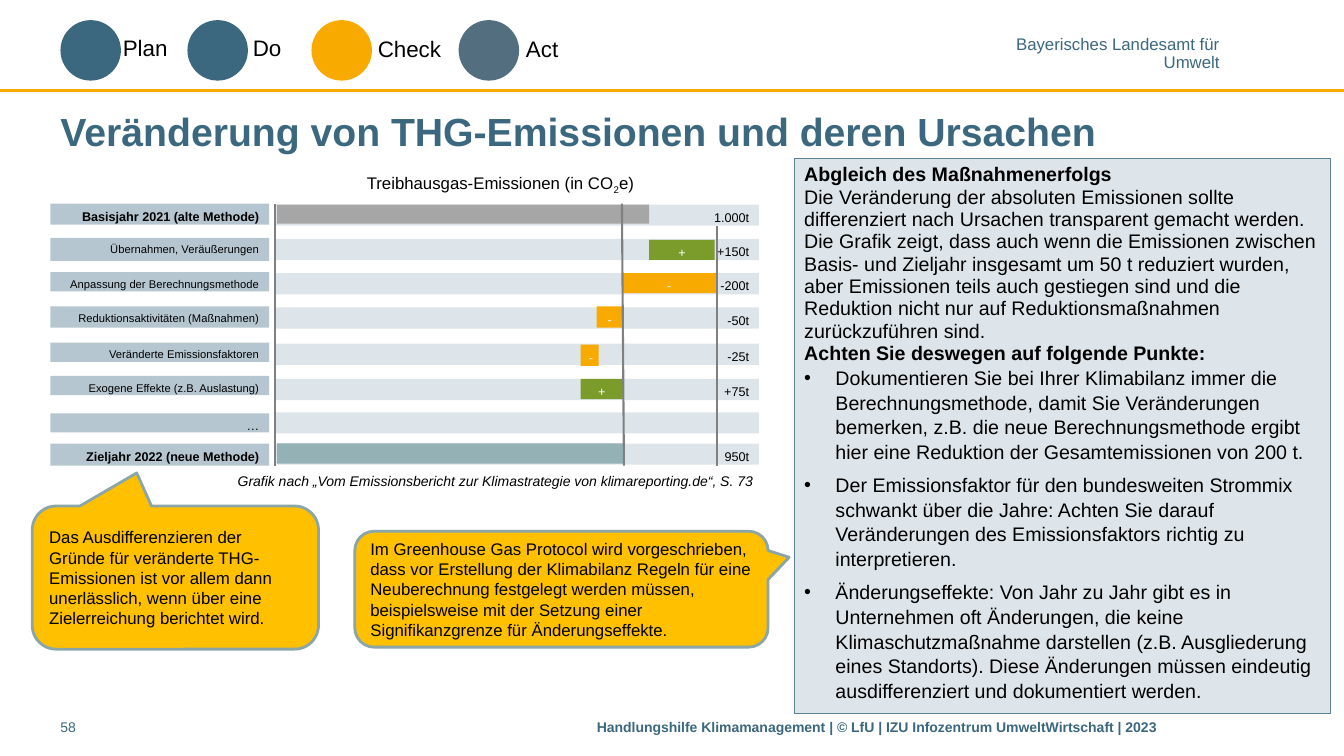
from lxml import etree
from pptx import Presentation
from pptx.dml.color import RGBColor
from pptx.enum.shapes import MSO_CONNECTOR, MSO_SHAPE
from pptx.enum.text import MSO_ANCHOR, PP_ALIGN
from pptx.oxml.ns import qn
from pptx.util import Inches, Pt

RECTANGLE = MSO_SHAPE.RECTANGLE
OVAL = MSO_SHAPE.OVAL
CALLOUT = MSO_SHAPE.ROUNDED_RECTANGULAR_CALLOUT
STRAIGHT = MSO_CONNECTOR.STRAIGHT
TOP, MIDDLE = MSO_ANCHOR.TOP, MSO_ANCHOR.MIDDLE
LEFT, CENTER, RIGHT = PP_ALIGN.LEFT, PP_ALIGN.CENTER, PP_ALIGN.RIGHT

FONT = "Arial"
BLACK = RGBColor(0x00, 0x00, 0x00)
WHITE = RGBColor(0xFF, 0xFF, 0xFF)
BLUE = RGBColor(0x3B, 0x68, 0x7F)
SLATE = RGBColor(0x52, 0x6E, 0x7F)
ORANGE = RGBColor(0xF9, 0xAA, 0x00)
AMBER = RGBColor(0xFF, 0xC0, 0x00)
GREEN = RGBColor(0x7B, 0x9C, 0x2A)
TEAL = RGBColor(0x94, 0xB2, 0xB5)
CALLOUT_EDGE = RGBColor(0x8A, 0xA6, 0xA8)
PANEL_EDGE = RGBColor(0x5C, 0x83, 0x95)
LABEL_FILL = RGBColor(0xB6, 0xC6, 0xD0)
PALE = RGBColor(0xDE, 0xE5, 0xEA)
GRAY = RGBColor(0xA6, 0xA6, 0xA6)
AXIS = RGBColor(0x80, 0x80, 0x80)

CELL = Inches(0.1)
COLUMNS, ROWS = 133.33, 75
LABEL_COLUMN, LABEL_WIDTH = 5, 21.7
TRACK_COLUMN, TRACK_WIDTH, TRACK_HEIGHT = 27.3, 48, 2.1

PHASES = [
    ("Plan", BLUE, 6, 11.2, 2.9),
    ("Do", BLUE, 18.6, 24.1, 2.9),
    ("Check", ORANGE, 30.9, 36.5, 3),
    ("Act", SLATE, 45.5, 51.2, 3),
]
CHART_ROWS = [
    ("Basisjahr 2021 (alte Methode)", 9, True, 20.2, 2.1, 20.3, "1.000t"),
    ("Übernahmen, Veräußerungen", 8, False, 23.6, 2.3, 23.7, "+150t"),
    ("Anpassung der Berechnungsmethode", 8, False, 27, 1.9, 27.1, "-200t"),
    ("Reduktionsaktivitäten (Maßnahmen)", 8, False, 30.4, 2.1, 30.5, "-50t"),
    ("Veränderte Emissionsfaktoren", 8, False, 34, 1.9, 34.1, "-25t"),
    ("Exogene Effekte (z.B. Auslastung)", 8, False, 37.3, 1.9, 37.6, "+75t"),
    ("…", 9, False, 41, 1.9, 40.9, ""),
    ("Zieljahr 2022 (neue Methode)", 9, True, 44, 2.2, 44, "950t"),
]
BARS = [
    (27.5, 20.3, 36.9, 1.9, GRAY, ""),
    (27.5, 44, 34.4, 2, TEAL, ""),
    (64.4, 23.8, 6.5, 2, GREEN, "+"),
    (61.7, 27.1, 9.4, 2, ORANGE, "-"),
    (59.2, 30.4, 2.6, 2.1, ORANGE, "-"),
    (57.6, 34.2, 1.8, 2.1, ORANGE, "-"),
    (57.6, 37.6, 4.2, 2, GREEN, "+"),
]
GUIDES = [(27.3, 20.2, 27.3), (71.1, 22.4, 71.1), (61.7, 20.2, 61.9)]
GUIDE_END = 46.2
CALLOUTS = [
    ((3.2, 50.2, 28.4, 14.2), (-0.135, -0.731, 0.167),
     "Das Ausdifferenzieren der Gründe für veränderte THG-Emissionen ist vor allem dann "
     "unerlässlich, wenn über eine Zielerreichung berichtet wird."),
    ((35.2, 52.7, 41, 11.5), (0.551, -0.275, 0.167),
     "Im Greenhouse Gas Protocol wird vorgeschrieben, dass vor Erstellung der Klimabilanz "
     "Regeln für eine Neuberechnung festgelegt werden müssen, beispielsweise mit der Setzung "
     "einer Signifikanzgrenze für Änderungseffekte."),
]
PANEL_TEXT = [
    ("Abgleich des Maßnahmenerfolgs", True),
    ("Die Veränderung der absoluten Emissionen sollte differenziert nach Ursachen transparent "
     "gemacht werden. Die Grafik zeigt, dass auch wenn die Emissionen zwischen Basis- und "
     "Zieljahr insgesamt um 50 t reduziert wurden, aber Emissionen teils auch gestiegen sind "
     "und die Reduktion nicht nur auf Reduktionsmaßnahmen zurückzuführen sind.", False),
    ("Achten Sie deswegen auf folgende Punkte:", True),
]
PANEL_BULLETS = [
    "Dokumentieren Sie bei Ihrer Klimabilanz immer die Berechnungsmethode, damit Sie "
    "Veränderungen bemerken, z.B. die neue Berechnungsmethode ergibt hier eine Reduktion der "
    "Gesamtemissionen von 200 t.",
    "Der Emissionsfaktor für den bundesweiten Strommix schwankt über die Jahre: Achten Sie "
    "darauf Veränderungen des Emissionsfaktors richtig zu interpretieren.",
    "Änderungseffekte: Von Jahr zu Jahr gibt es in Unternehmen oft Änderungen, die keine "
    "Klimaschutzmaßnahme darstellen (z.B. Ausgliederung eines Standorts). Diese Änderungen "
    "müssen eindeutig ausdifferenziert und dokumentiert werden.",
]


def grid(*cells):
    return [round(CELL * cell) for cell in cells]


def add_run(paragraph, text, size, color=BLACK, bold=False, italic=False):
    run = paragraph.add_run()
    run.text = text
    font = run.font
    font.name, font.size, font.bold, font.italic = FONT, Pt(size), bold, italic
    font.color.rgb = color
    return run


def next_paragraph(shape, align=LEFT):
    frame = shape.text_frame
    first = frame.paragraphs[0]
    paragraph = frame.add_paragraph() if first.runs else first
    paragraph.alignment = align
    return paragraph


def add_text(slide, box, text="", size=12, color=BLACK, bold=False, italic=False,
             inset=None, wrap=True, anchor=TOP):
    shape = slide.shapes.add_textbox(*grid(*box))
    frame = shape.text_frame
    frame.word_wrap, frame.vertical_anchor = wrap, anchor
    if inset is not None:
        frame.margin_left = frame.margin_right = inset
    if text:
        add_run(next_paragraph(shape), text, size, color, bold, italic)
    return shape


def add_block(slide, kind, box, fill, edge=None, edge_width=1, anchor=TOP):
    shape = slide.shapes.add_shape(kind, *grid(*box))
    shape.shadow.inherit = False
    shape.fill.solid()
    shape.fill.fore_color.rgb = fill
    if edge is None:
        shape.line.fill.background()
    else:
        shape.line.color.rgb = edge
        shape.line.width = Pt(edge_width)
    shape.text_frame.word_wrap = True
    shape.text_frame.vertical_anchor = anchor
    return shape


def add_rule(slide, ends, color, width):
    rule = slide.shapes.add_connector(STRAIGHT, *grid(*ends))
    rule.line.color.rgb = color
    rule.line.width = Pt(width)
    etree.SubElement(rule._element.spPr, qn("a:effectLst"))


def add_bullet(paragraph):
    properties = paragraph._p.get_or_add_pPr()
    properties.set("marL", str(Inches(0.31)))
    properties.set("indent", str(-Inches(0.31)))
    paragraph.line_spacing = 1.05
    paragraph.space_after = Pt(6)
    etree.SubElement(properties, qn("a:buFont")).set("typeface", FONT)
    etree.SubElement(properties, qn("a:buChar")).set("char", "•")


def add_header(slide):
    add_rule(slide, (0, 9, COLUMNS, 9), ORANGE, 2)
    agency = add_text(slide, (100.7, 3.7, 20.3, 3.4), inset=0, wrap=False)
    agency.text_frame.margin_top = agency.text_frame.margin_bottom = 0
    for text in ("Bayerisches Landesamt für", "Umwelt"):
        paragraph = next_paragraph(agency, RIGHT)
        paragraph.line_spacing = 0.85
        add_run(paragraph, text, 12, BLUE)
    for name, color, circle_column, text_column, text_row in PHASES:
        add_block(slide, OVAL, (circle_column, 2, 6, 6), color)
        add_text(slide, (text_column, text_row, 13, 3.7), name, 16)
    add_text(slide, (6, 10.2, 123.1, 5.5), "Veränderung von THG-Emissionen und deren Ursachen",
             28, BLUE, bold=True, inset=0, anchor=MIDDLE)


def add_waterfall(slide):
    for label, size, bold, label_row, label_height, track_row, value in CHART_ROWS:
        name = add_block(slide, RECTANGLE,
                         (LABEL_COLUMN, label_row, LABEL_WIDTH, label_height), LABEL_FILL)
        add_run(next_paragraph(name, RIGHT), label, size, bold=bold)
        track = add_block(slide, RECTANGLE,
                          (TRACK_COLUMN, track_row, TRACK_WIDTH, TRACK_HEIGHT), PALE)
        if value:
            add_run(next_paragraph(track, RIGHT), value, 9)
    for left, top, width, height, color, sign in BARS:
        bar = add_block(slide, RECTANGLE, (left, top, width, height), color)
        if sign:
            add_run(next_paragraph(bar, CENTER), sign, 9, WHITE)
    for start, top, end in GUIDES:
        add_rule(slide, (start, top, end, GUIDE_END), AXIS, 1.5)
    heading = next_paragraph(add_text(slide, (35.4, 16.6, 28.8, 3), wrap=False))
    add_run(heading, "Treibhausgas-Emissionen (in CO", 12)
    subscript = add_run(heading, "2", 12)
    subscript._r.get_or_add_rPr().set("baseline", "-25000")
    add_run(heading, "e)", 12)
    add_text(slide, (22.6, 46.4, 57, 2.7),
             "Grafik nach „Vom Emissionsbericht zur Klimastrategie von klimareporting.de“, S. 73",
             10, italic=True)


def add_callout(slide, box, adjustments, text):
    callout = add_block(slide, CALLOUT, box, AMBER, CALLOUT_EDGE, 2, MIDDLE)
    for index, value in enumerate(adjustments):
        callout.adjustments[index] = value
    add_run(next_paragraph(callout), text, 12)


def add_panel(slide):
    panel = add_block(slide, RECTANGLE, (78.8, 15.7, 53.2, 55.1), PALE, PANEL_EDGE)
    for text, bold in PANEL_TEXT:
        paragraph = next_paragraph(panel)
        paragraph.line_spacing = Pt(16)
        add_run(paragraph, text, 14, bold=bold)
    for text in PANEL_BULLETS:
        paragraph = next_paragraph(panel)
        add_bullet(paragraph)
        add_run(paragraph, text, 14)


def add_footer(slide):
    add_text(slide, (59.2, 70.8, 69.9, 3.1),
             "Handlungshilfe Klimamanagement | © LfU | IZU Infozentrum UmweltWirtschaft | 2023",
             10, BLUE, bold=True, inset=0)
    add_text(slide, (6, 70.8, 7, 3.1), "58", 10, BLUE, inset=0)


def main():
    presentation = Presentation()
    presentation.slide_width, presentation.slide_height = grid(COLUMNS, ROWS)
    slide = presentation.slides.add_slide(presentation.slide_layouts[6])
    add_header(slide)
    add_waterfall(slide)
    for box, adjustments, text in CALLOUTS:
        add_callout(slide, box, adjustments, text)
    add_panel(slide)
    add_footer(slide)
    presentation.save("out.pptx")


if __name__ == "__main__":
    main()
